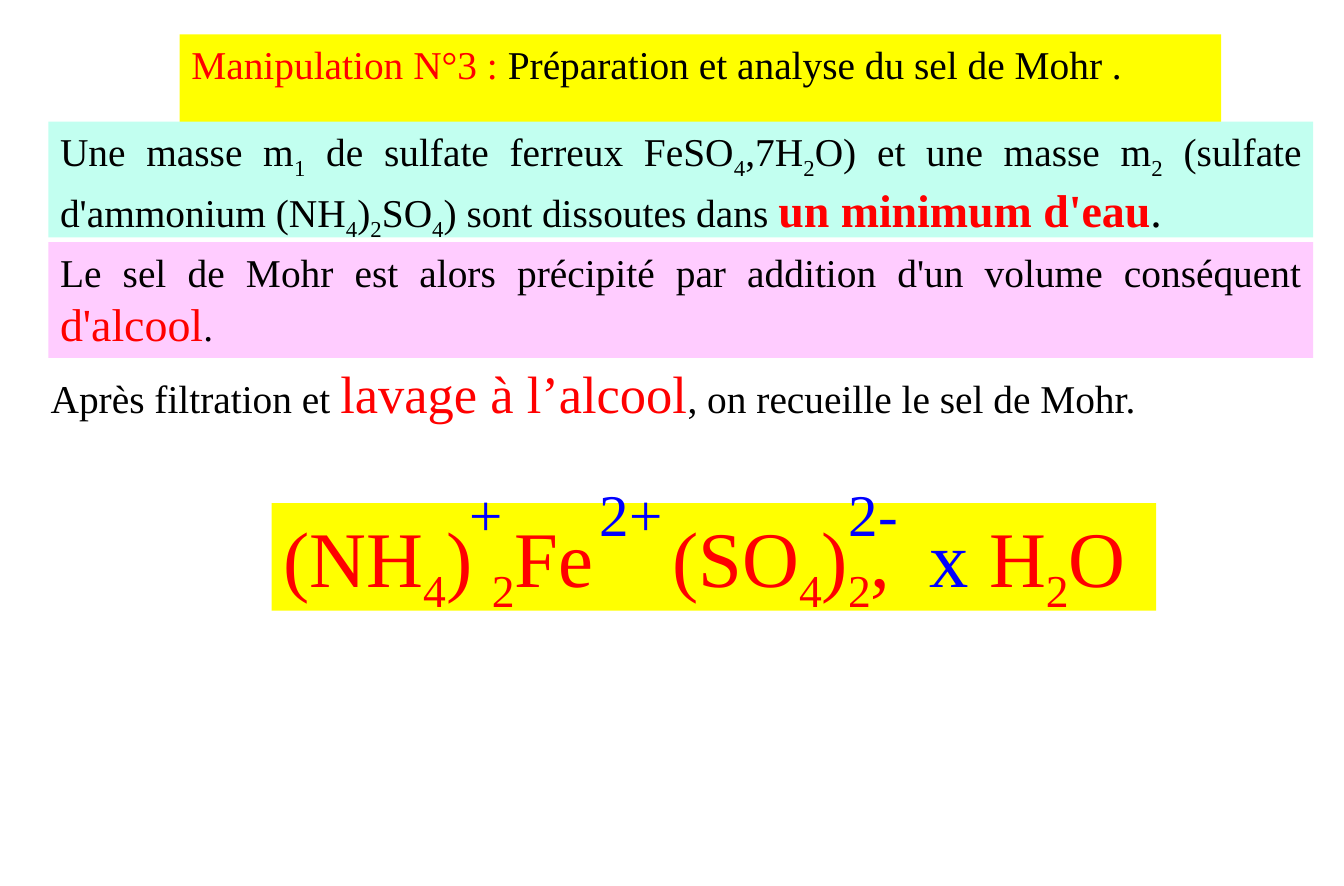
from pptx import Presentation
from pptx.dml.color import RGBColor
from pptx.enum.text import MSO_ANCHOR, MSO_AUTO_SIZE, PP_ALIGN
from pptx.util import Inches, Pt

FONT = "Times New Roman"
BLACK, RED, BLUE = "000000", "FF0000", "0000FF"
YELLOW, MINT, PINK = "FFFF00", "C2FFF0", "FFCCFF"
BODY, FORMULA, CHARGE = 24, 48, 36


def color(hex_value):
    return RGBColor.from_string(hex_value)


def add_run(paragraph, text, size, hue, bold=False, **properties):
    """Add one run; properties are raw attributes such as baseline or spc."""
    run = paragraph.add_run()
    run.text = text
    font = run.font
    font.name, font.size, font.bold = FONT, Pt(size), bold
    font.color.rgb = color(hue)
    for name, value in properties.items():
        run._r.get_or_add_rPr().set(name, str(value))


def add_chemistry(paragraph, text, size, hue):
    """Add text in which the character after each underscore is a subscript."""
    start, *pieces = text.split("_")
    add_run(paragraph, start, size, hue)
    for piece in pieces:
        add_run(paragraph, piece[0], size, hue, baseline=-25000)
        if piece[1:]:
            add_run(paragraph, piece[1:], size, hue)


def format_box(shape, box, fill=None, align=PP_ALIGN.LEFT, wrap=True):
    """Place a text shape, fill it and return its first paragraph."""
    shape.left, shape.top, shape.width, shape.height = map(Inches, box)
    if fill:
        shape.fill.solid()
        shape.fill.fore_color.rgb = color(fill)
    frame = shape.text_frame
    frame.word_wrap = wrap
    frame.auto_size = MSO_AUTO_SIZE.SHAPE_TO_FIT_TEXT
    frame.vertical_anchor = MSO_ANCHOR.TOP
    paragraph = frame.paragraphs[0]
    paragraph.alignment = align
    return paragraph


def add_box(slide, box, **style):
    return format_box(slide.shapes.add_textbox(*map(Inches, box)), box, **style)


def add_title(slide, box):
    heading = format_box(slide.shapes.title, box, fill=YELLOW)
    add_run(heading, "Manipulation N°3\u00a0:\u00a0", BODY, RED)
    add_run(heading, "Préparation et analyse du sel de Mohr .", BODY, BLACK)


def add_step(slide, box, before, key, key_size, after, after_size=BODY,
             bold=False, fill=None):
    """Add a justified step of the procedure with its key words in red."""
    step = add_box(slide, box, fill=fill, align=PP_ALIGN.JUSTIFY)
    add_chemistry(step, before, BODY, BLACK)
    add_run(step, key, key_size, RED, bold)
    add_run(step, after, after_size, BLACK)


def add_formula(slide, box):
    """Add the salt formula and the ion charges raised above it."""
    formula = add_box(slide, box, fill=YELLOW, wrap=False)
    add_chemistry(formula, "(NH_4) _2Fe", FORMULA, RED)
    add_run(formula, " ", FORMULA, RED, spc=3600)
    add_chemistry(formula, "(SO_4)_2,", FORMULA, RED)
    add_run(formula, " ", FORMULA, RED, spc=1200)
    add_run(formula, "x ", FORMULA, BLUE)
    add_chemistry(formula, "H_2O", FORMULA, RED)

    left, top = box[:2]
    for charge, offset, width in (("+", 1.58, 0.49), ("2+", 2.68, 0.74),
                                  ("2-", 4.79, 0.62)):
        label = add_box(slide, (left + offset, top - 0.27, width, 0.71), wrap=False)
        add_run(label, charge, CHARGE, BLUE)


def main():
    deck = Presentation()
    deck.slide_width, deck.slide_height = Inches(11.38), Inches(7.5)
    slide = deck.slides.add_slide(deck.slide_layouts[5])

    add_title(slide, (1.52, 0.29, 8.82, 0.5))
    add_formula(slide, (2.3, 4.26, 7.49, 0.91))
    add_step(slide, (0.41, 1.03, 10.71, 0.98),
             "Une masse m_1 de sulfate ferreux FeSO_4,7H_2O) et une masse m_2 "
             "(sulfate d'ammonium (NH_4)_2SO_4) sont dissoutes dans ",
             "un minimum d'eau", 28, ".", after_size=28, bold=True, fill=MINT)
    add_step(slide, (0.41, 2.05, 10.71, 0.98),
             "Le sel de Mohr est alors précipité par addition d'un volume conséquent ",
             "d'alcool", 28, ".", fill=PINK)
    add_step(slide, (0.33, 3.01, 10.71, 0.64), "Après filtration et ",
             "lavage à l’alcool", 32, ", on recueille le sel de Mohr.")
    deck.save("out.pptx")


if __name__ == "__main__":
    main()
